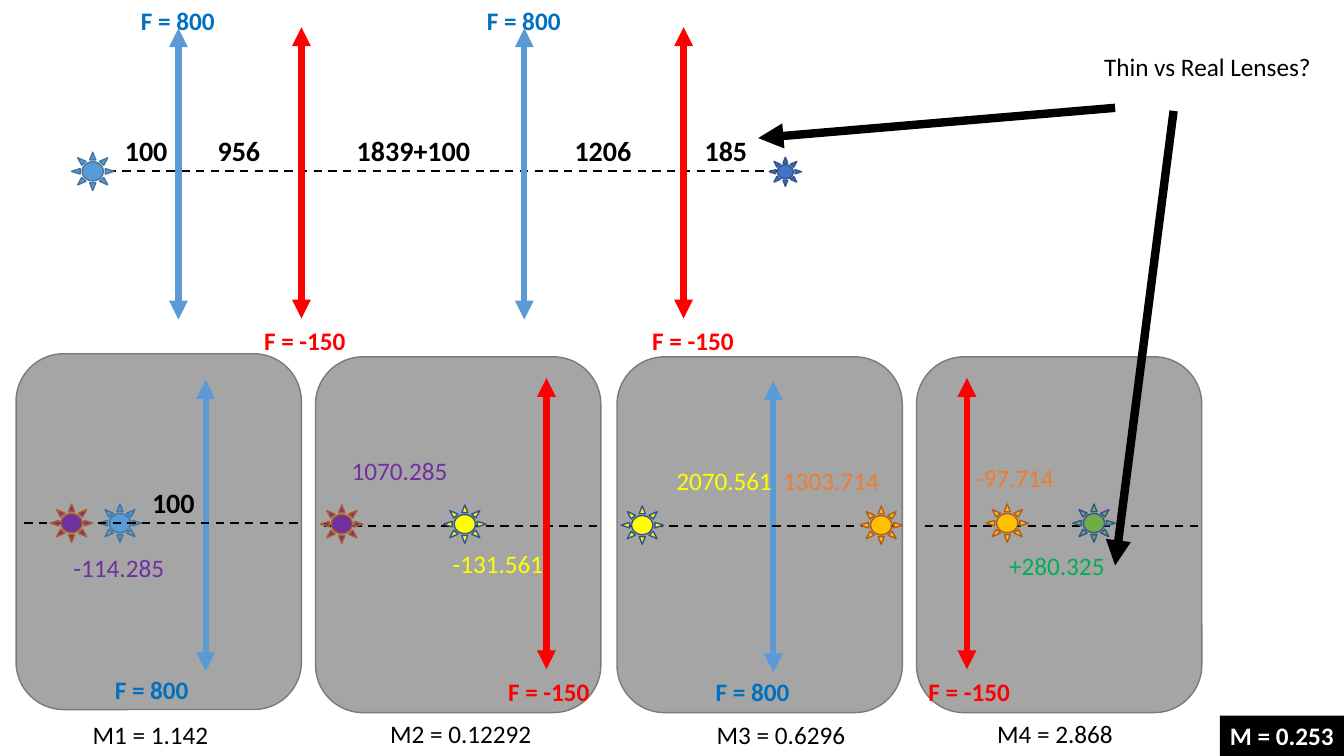
from dataclasses import dataclass

from lxml.etree import SubElement
from pptx import Presentation
from pptx.dml.color import RGBColor
from pptx.enum.dml import MSO_LINE
from pptx.enum.shapes import MSO_CONNECTOR, MSO_SHAPE
from pptx.enum.text import MSO_ANCHOR, MSO_AUTO_SIZE, PP_ALIGN
from pptx.oxml.ns import qn
from pptx.util import Inches, Pt


@dataclass(frozen=True)
class Theme:
    font: str = "Calibri"
    note_size: int = 18
    distance_size: int = 20
    black: str = "000000"
    white: str = "FFFFFF"
    panel: str = "A5A5A5"
    panel_edge: str = "7A7A7A"
    blue: str = "5B9BD5"
    blue_text: str = "0070C0"
    red: str = "FF0000"
    purple: str = "7030A0"
    yellow: str = "FFFF00"
    orange: str = "ED7D31"
    green: str = "00B050"


THEME = Theme()

# Content: lens kinds are (label, label width, arrow colour, label colour)
LENSES = {
    "convex": ("F = 800", 0.94, THEME.blue, THEME.blue_text),
    "concave": ("F = -150", 1.02, THEME.red, THEME.red),
}
# Source and image points are (fill, outline)
SUNS = {
    "source": (THEME.blue, "43739E"),
    "image": ("4472C4", "325491"),
    "first": (THEME.purple, "AF5C24"),
    "second": (THEME.yellow, "325491"),
    "third": ("FFC000", "AF5C24"),
    "final": ("70AD47", "325491"),
}
TITLE = "Thin vs Real Lenses?"
TOTAL = "M = 0.253"

# Each group: left, top and its items from back to front, in inches from that corner
# axis: x from, x to, y | lens: kind, x, y, label x, label y
# sun: kind, x, y, scale | distance: text, x, y, width | note: text, x, y, width, colour
SYSTEM = (0, 0, [
    ("axis", 0.92, 7.8, 1.7),
    ("sun", "source", 0.71, 1.51),
    ("sun", "image", 7.63, 1.56, 0.76),
    ("lens", "convex", 1.77, 0.28, 1.3, 0),
    ("lens", "concave", 2.99, 0.27, 2.52, 3.18),
    ("lens", "convex", 5.2, 0.28, 4.73, 0),
    ("lens", "concave", 6.78, 0.27, 6.37, 3.18),
    ("distance", "100", 1.14, 1.28, 0.63),
    ("distance", "956", 2.06, 1.27, 0.63),
    ("distance", "1839+100", 3.44, 1.28, 1.34),
    ("distance", "1206", 5.6, 1.27, 0.77),
    ("distance", "185", 6.89, 1.28, 0.63),
])
AXIS = ("axis", 0.08, 2.83, 1.68)
PANELS = [
    (0.16, 3.51, [
        ("lens", "convex", 1.88, 0.26, 0.88, 3.13),
        ("sun", "source", 0.82, 1.49),
        ("distance", "100", 1.25, 1.26, 0.63),
        AXIS,
        ("sun", "first", 0.34, 1.49),
        ("note", "-114.285", 0.47, 1.92, 1.11, THEME.purple),
        ("note", "M1 = 1.142", 0.66, 3.58, 1.42, THEME.black),
    ]),
    (3.13, 3.54, [
        AXIS,
        ("lens", "concave", 2.29, 0.21, 1.81, 3.12),
        ("sun", "first", 0.05, 1.47),
        ("note", "1070.285", 0.26, 0.93, 1.16, THEME.purple),
        ("sun", "second", 1.27, 1.47),
        ("note", "-131.561", 1.26, 1.85, 1.11, THEME.yellow),
        ("note", "M2 = 0.12292", 0.64, 3.54, 1.68, THEME.black),
    ]),
    (6.12, 3.54, [
        ("lens", "convex", 1.55, 0.24, 0.88, 3.12),
        AXIS,
        ("sun", "second", 0.04, 1.48),
        ("note", "2070.561", 0.49, 1.03, 1.16, THEME.yellow),
        ("sun", "third", 2.41, 1.48),
        ("note", "1303.714", 1.55, 1.03, 1.16, THEME.orange),
        ("note", "M3 = 0.6296", 0.89, 3.55, 1.55, THEME.black),
    ]),
    (9.09, 3.54, [
        AXIS,
        ("lens", "concave", 0.5, 0.21, 0.02, 3.12),
        ("sun", "third", 0.69, 1.46),
        ("note", "-97.714", 0.49, 1.0, 0.98, THEME.orange),
        ("sun", "final", 1.55, 1.46),
        ("note", "+280.325", 0.82, 1.87, 1.16, THEME.green),
        ("note", "M4 = 2.868", 0.7, 3.54, 1.42, THEME.black),
    ]),
]
POINTERS = [((11.06, 1.07), (7.52, 1.37)), ((11.64, 1.1), (11.06, 5.61))]

PANEL_SIZE = (2.83, 3.53)
SUN_SIZE = (0.42, 0.38)
LENS_LENGTH = 2.89
LINE_HEIGHT = 0.4

deck = Presentation()
deck.slide_width, deck.slide_height = Inches(13.33), Inches(7.5)
page = deck.slides.add_slide(deck.slide_layouts[5])


def write(shape, text, colour, size=THEME.note_size, bold=False):
    frame = shape.text_frame
    frame.text = text
    frame.word_wrap = False
    frame.auto_size = MSO_AUTO_SIZE.NONE
    frame.vertical_anchor = MSO_ANCHOR.TOP
    para = frame.paragraphs[0]
    para.alignment = PP_ALIGN.LEFT
    para.font.name, para.font.size, para.font.bold = THEME.font, Pt(size), bold
    para.font.color.rgb = RGBColor.from_string(colour)


def add_label(text, x, y, width, colour, size=THEME.note_size, bold=False):
    height = LINE_HEIGHT * size / THEME.note_size
    box = page.shapes.add_textbox(*map(Inches, (x, y, width, height)))
    write(box, text, colour, size, bold)


def add_figure(kind, x, y, size, fill, edge=None):
    figure = page.shapes.add_shape(kind, *map(Inches, (x, y, *size)))
    figure.shadow.inherit = False
    figure.fill.solid()
    figure.fill.fore_color.rgb = RGBColor.from_string(fill)
    if edge:
        figure.line.color.rgb = RGBColor.from_string(edge)
        figure.line.width = Pt(1)
    else:
        figure.line.fill.background()
    return figure


def add_line(start, end, colour, width, arrows=(), dash=None):
    link = page.shapes.add_connector(MSO_CONNECTOR.STRAIGHT, *map(Inches, (*start, *end)))
    link.line.color.rgb = RGBColor.from_string(colour)
    link.line.width = Pt(width)
    if dash:
        link.line.dash_style = dash
    properties = link.element.spPr
    for arrow in arrows:
        SubElement(properties.find(qn("a:ln")), qn(f"a:{arrow}"), type="triangle")
    SubElement(properties, qn("a:effectLst"))


def add_axis(left, top, start, end, y):
    add_line((left + start, top + y), (left + end, top + y), THEME.black, 1.5, dash=MSO_LINE.DASH)


def add_lens(left, top, kind, x, y, label_x, label_y):
    label, width, colour, label_colour = LENSES[kind]
    add_line((left + x, top + y), (left + x, top + y + LENS_LENGTH), colour, 4.5, ("headEnd", "tailEnd"))
    add_label(label, left + label_x, top + label_y, width, label_colour, bold=True)


def add_sun(left, top, kind, x, y, scale=1):
    size = [side * scale for side in SUN_SIZE]
    add_figure(MSO_SHAPE.SUN, left + x, top + y, size, *SUNS[kind])


def add_distance(left, top, text, x, y, width):
    add_label(text, left + x, top + y, width, THEME.black, THEME.distance_size, True)


def add_note(left, top, text, x, y, width, colour):
    add_label(text, left + x, top + y, width, colour)


BUILDERS = {"axis": add_axis, "lens": add_lens, "sun": add_sun,
            "distance": add_distance, "note": add_note}


def add_group(left, top, items):
    for kind, *details in items:
        BUILDERS[kind](left, top, *details)


# Title question
title = page.shapes.title
title.left, title.top, title.width, title.height = map(Inches, (10.85, 0.46, 2.28, LINE_HEIGHT))
write(title, TITLE, THEME.black)

# Whole lens system, then one panel per lens
add_group(*SYSTEM)
for left, top, items in PANELS:
    add_figure(MSO_SHAPE.ROUNDED_RECTANGLE, left, top, PANEL_SIZE, THEME.panel, THEME.panel_edge)
    add_group(left, top, items)

# Total magnification and pointers from the question
total = add_figure(MSO_SHAPE.RECTANGLE, 12.1, 7.1, (1.23, LINE_HEIGHT), THEME.black)
write(total, TOTAL, THEME.white, bold=True)
for start, end in POINTERS:
    add_line(start, end, THEME.black, 6, ("tailEnd",))

deck.save("out.pptx")
